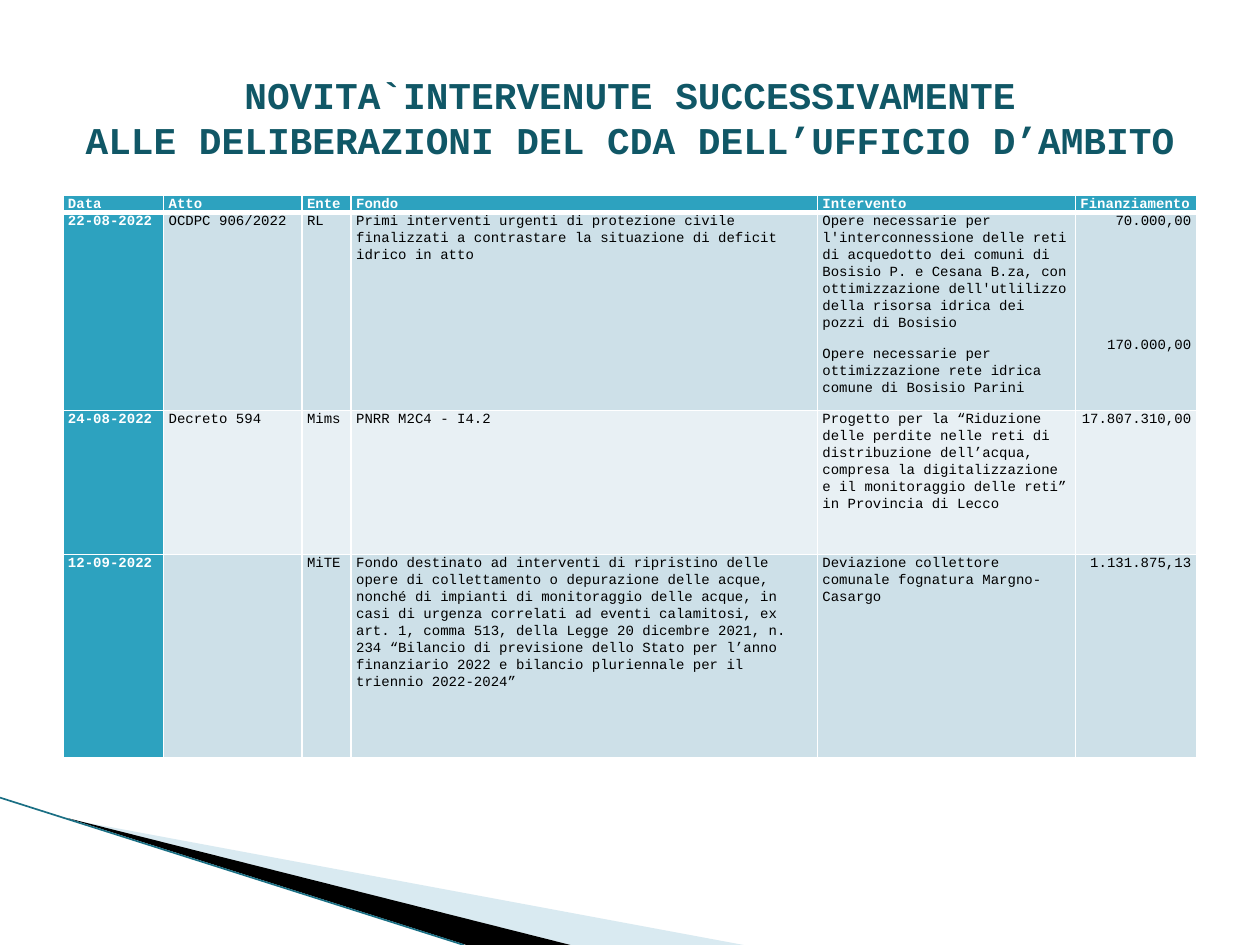
import pptx
import pptx.dml.color
import pptx.enum.shapes
import pptx.enum.text
import pptx.oxml
import pptx.oxml.ns
import pptx.util

Cm = pptx.util.Cm
Pt = pptx.util.Pt
RGB = pptx.dml.color.RGBColor
ALIGN = pptx.enum.text.PP_ALIGN
NS = pptx.oxml.ns.nsdecls("a")

WHITE = RGB(0xFF, 0xFF, 0xFF)
BLACK = RGB(0x00, 0x00, 0x00)
TEAL = RGB(0x2D, 0xA2, 0xBF)
DEEP = RGB(0x10, 0x57, 0x66)
EDGE = RGB(0x1A, 0x6F, 0x84)
MIST = RGB(0xA0, 0xCB, 0xDC)
BANDS = [RGB(0xCD, 0xE0, 0xE8), RGB(0xE8, 0xF0, 0xF4)]

TITLE = ["NOVITA`INTERVENUTE SUCCESSIVAMENTE",
         "ALLE DELIBERAZIONI DEL CDA DELL’UFFICIO D’AMBITO"]
WIDTHS = [2.03, 2.79, 0.99, 9.4, 5.2, 2.44]
HEIGHTS = [0.25, 3.99, 2.9, 4.11]
GAP = 53  # points that bring the second sum down to its own work

# Each cell is a list of paragraphs.
ROWS = [
    [["Data"], ["Atto"], ["Ente"], ["Fondo"], ["Intervento"],
     ["Finanziamento"]],
    [["22-08-2022"], ["OCDPC 906/2022"], ["RL"],
     ["Primi interventi urgenti di protezione civile finalizzati a "
      "contrastare la situazione di deficit idrico in atto"],
     ["Opere necessarie per l'interconnessione delle reti di acquedotto dei "
      "comuni di Bosisio P. e Cesana B.za, con ottimizzazione "
      "dell'utlilizzo della risorsa idrica dei pozzi di Bosisio",
      "Opere necessarie per ottimizzazione rete idrica comune di Bosisio "
      "Parini"],
     ["70.000,00", "170.000,00"]],
    [["24-08-2022"], ["Decreto 594"], ["Mims"], ["PNRR M2C4 - I4.2"],
     ["Progetto per la “Riduzione delle perdite nelle reti di distribuzione "
      "dell’acqua, compresa la digitalizzazione e il monitoraggio delle "
      "reti” in Provincia di Lecco"],
     ["17.807.310,00"]],
    [["12-09-2022"], [], ["MiTE"],
     ["Fondo destinato ad interventi di ripristino delle opere di "
      "collettamento o depurazione delle acque, nonché di impianti di "
      "monitoraggio delle acque, in casi di urgenza correlati ad eventi "
      "calamitosi, ex art. 1, comma 513, della Legge 20 dicembre 2021, n. "
      "234 “Bilancio di previsione dello Stato per l’anno finanziario 2022 "
      "e bilancio pluriennale per il triennio 2022-2024”"],
     ["Deviazione collettore comunale fognatura Margno-Casargo"],
     ["1.131.875,13"]],
]


class Deck:
    def __init__(self, slide, face="Courier New", size=8):
        self.slide = slide
        self.face = face
        self.size = size

    def run(self, para, text, color, bold=False, size=None):
        run = para.add_run()
        run.text = text
        run.font.name = self.face
        run.font.size = Pt(size or self.size)
        run.font.bold = bold
        run.font.color.rgb = color

    def title(self, lines, left, top, width, height):
        box = self.slide.shapes.title
        box.left, box.top = Cm(left), Cm(top)
        box.width, box.height = Cm(width), Cm(height)
        frame = box.text_frame
        frame.word_wrap = True
        frame.auto_size = pptx.enum.text.MSO_AUTO_SIZE.NONE
        frame.vertical_anchor = pptx.enum.text.MSO_ANCHOR.MIDDLE
        para = frame.paragraphs[0]
        para.alignment = ALIGN.CENTER
        for i, line in enumerate(lines):
            if i:
                para.add_line_break()
            self.run(para, line, DEEP, True, 21.6)

    def wedge(self, points, color, alpha=None):
        """Draw a filled outline; alpha is opacity in percent."""
        spots = [(Cm(x), Cm(y)) for x, y in points]
        path = self.slide.shapes.build_freeform(*spots[0])
        path.add_line_segments(spots[1:])
        shape = path.convert_to_shape()
        shape.shadow.inherit = False
        shape.line.fill.background()
        shape.fill.solid()
        shape.fill.fore_color.rgb = color
        if alpha:
            tint = shape.element.spPr.find(".//" + pptx.oxml.ns.qn("a:srgbClr"))
            tint.append(pptx.oxml.parse_xml(
                f'<a:alpha {NS} val="{alpha * 1000}"/>'))

    def line(self, start, end, color, width):
        kind = pptx.enum.shapes.MSO_CONNECTOR.STRAIGHT
        line = self.slide.shapes.add_connector(
            kind, *map(Cm, start), *map(Cm, end))
        line.line.color.rgb = color
        line.line.width = Pt(width)
        line.element.spPr.append(pptx.oxml.parse_xml(f"<a:effectLst {NS}/>"))

    def rule(self, cell, **sides):
        """Set white cell borders, widths in points."""
        props = cell._tc.get_or_add_tcPr()
        for side, width in sides.items():
            props.append(pptx.oxml.parse_xml(
                f'<a:ln{side} {NS} w="{Pt(width)}"><a:solidFill>'
                f'<a:srgbClr val="{WHITE}"/></a:solidFill></a:ln{side}>'))

    def cell(self, cell, texts, fill, color, bold, align, gap):
        cell.margin_left = cell.margin_right = Cm(0.1)
        cell.margin_top = cell.margin_bottom = 0
        cell.fill.solid()
        cell.fill.fore_color.rgb = fill
        frame = cell.text_frame
        for i, text in enumerate(texts):
            para = frame.add_paragraph() if i else frame.paragraphs[0]
            para.alignment = align
            para.line_spacing = 1.07
            para.space_after = Pt(8)
            if i and gap:
                para.space_before = Pt(gap)
            self.run(para, text, color, bold)

    def table(self, rows, left, top):
        grid = self.slide.shapes.add_table(
            len(rows), len(WIDTHS), Cm(left), Cm(top),
            Cm(sum(WIDTHS)), Cm(sum(HEIGHTS))).table
        for col, width in zip(grid.columns, WIDTHS):
            col.width = Cm(width)
        for row, height in zip(grid.rows, HEIGHTS):
            row.height = Cm(height)
        for r, row in enumerate(rows):
            for c, texts in enumerate(row):
                cell = grid.cell(r, c)
                self.rule(cell, L=1, R=1, T=3 if r == 1 else 1,
                          B=3 if r == 0 else 1)
                head = r == 0 or c == 0
                sums = r > 0 and c == len(row) - 1
                self.cell(cell, texts,
                          TEAL if head else BANDS[(r - 1) % 2],
                          WHITE if head else BLACK, head,
                          ALIGN.RIGHT if sums else ALIGN.LEFT,
                          GAP if sums else 0)


def main():
    show = pptx.Presentation()
    show.slide_width, show.slide_height = Cm(25.4), Cm(19.05)
    deck = Deck(show.slides.add_slide(show.slide_layouts[5]))
    deck.wedge([(1.4, 16.52), (14.99, 19.05), (11.5, 19.05)], MIST, 40)
    deck.wedge([(1.35, 16.49), (11.5, 19.05), (9.4, 19.05)], BLACK)
    deck.line((0, 16.08), (9.35, 19.05), EDGE, 0.95)
    deck.title(TITLE, 1.27, 0.76, 22.86, 3.18)
    deck.table(ROWS, 1.27, 3.94)
    show.save("out.pptx")


if __name__ == "__main__":
    main()
